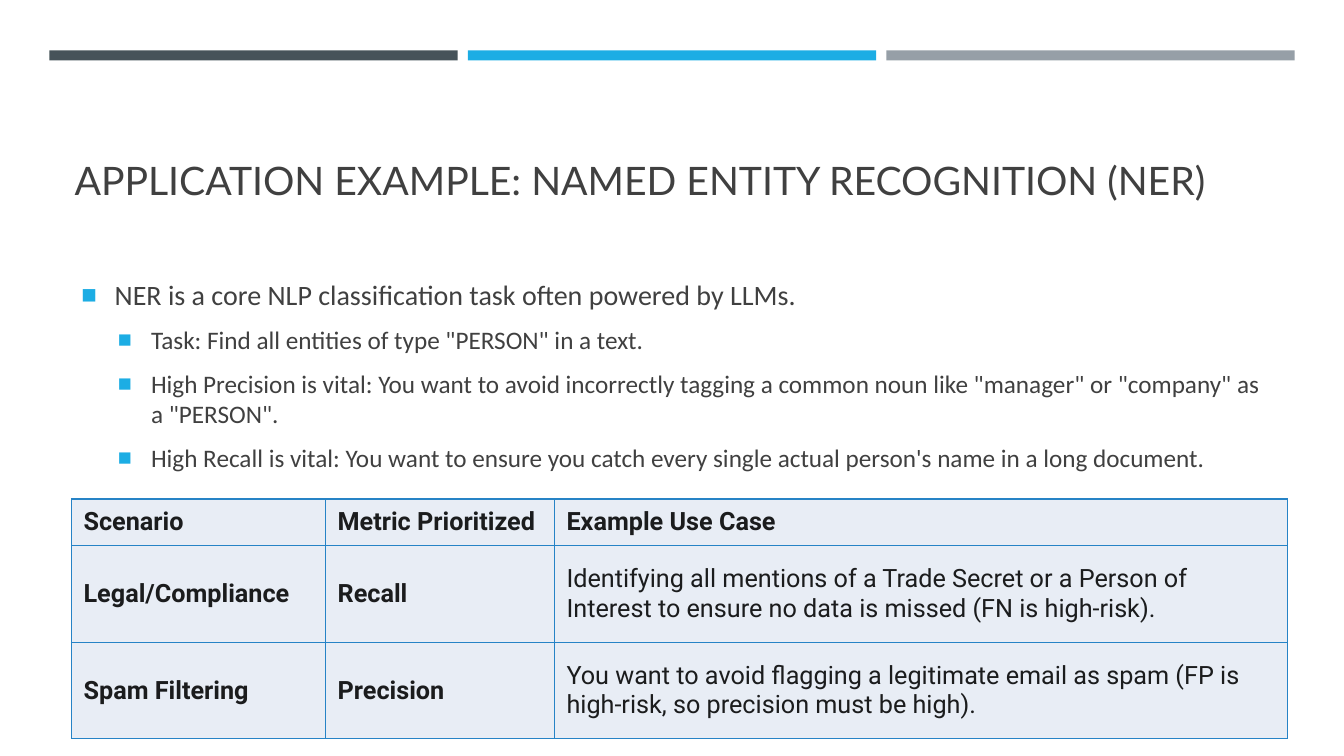
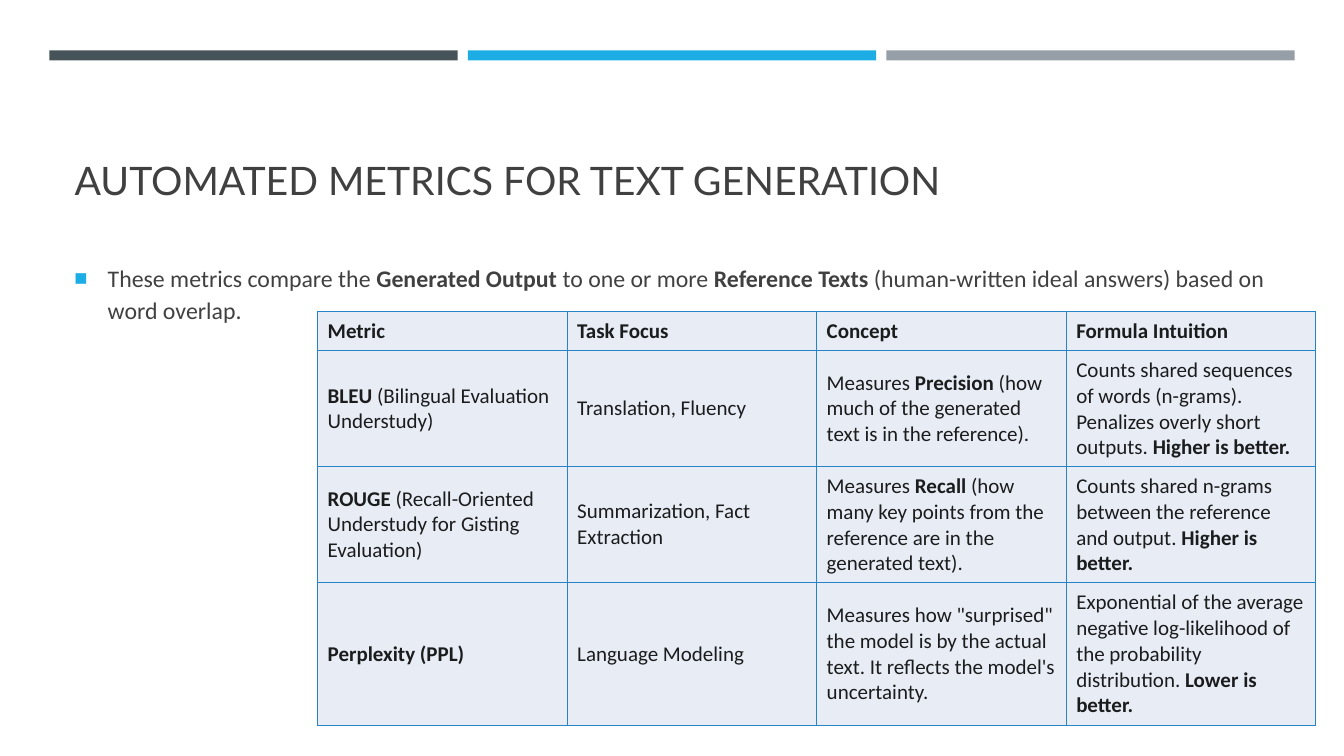
import pptx
import pptx.util
import pptx.dml.color
import pptx.enum.shapes
import pptx.enum.text
import pptx.oxml.ns
import lxml.etree

Inches = pptx.util.Inches
Pt = pptx.util.Pt
ANCHOR = pptx.enum.text.MSO_ANCHOR

COLORS = {
    "dark": "465359",
    "accent": "1CADE4",
    "gray": "969FA7",
    "text": "404040",
    "cell_text": "1B1C1D",
    "cell": "E8EDF5",
    "border": "2683C6",
}
BANDS = ["dark", "accent", "gray"]
BAND = {"left": 0.49, "top": 0.5, "width": 4.05, "height": 0.1, "step": 4.15}
TITLE_BOX = (0.64, 0.77, 12.06, 1.3)
TITLE_FONT = {"name": "Lato", "size": 28, "color": "text", "bold": False}
BODY_FONT = {"name": "Calibri", "color": "text"}
LEVELS = [
    {"margin": 0.33, "line_spacing": 1.1},
    {"margin": 0.69, "line_spacing": 1.0},
]
HANGING = 0.33

# Text between asterisks is bold.
SLIDES = [
    {
        "title": "APPLICATION EXAMPLE: NAMED ENTITY RECOGNITION (NER)",
        "body_box": (0.71, 2.67, 12.06, 2.18),
        "body": [
            (0, 20, "NER is a core NLP classification task often powered by LLMs."),
            (1, 18, 'Task: Find all entities of type "PERSON" in a text.'),
            (1, 18, 'High Precision is vital: You want to avoid incorrectly tagging a common noun '
                    'like "manager" or "company" as a "PERSON".'),
            (1, 18, "High Recall is vital: You want to ensure you catch every single actual "
                    "person's name in a long document."),
        ],
        "table": {
            "at": (0.71, 4.95),
            "columns": [2.52, 2.27, 7.27],
            "rows": [0.46, 0.96, 0.96],
            "insets": (0.12, 0.08),
            "font": {"name": "Roboto", "size": 18, "color": "cell_text"},
            "cells": [
                ["*Scenario*", "*Metric Prioritized*", "*Example Use Case*"],
                ["*Legal/Compliance*", "*Recall*",
                 "Identifying all mentions of a Trade Secret or a Person of Interest "
                 "to ensure no data is missed (FN is high-risk)."],
                ["*Spam Filtering*", "*Precision*",
                 "You want to avoid flagging a legitimate email as spam "
                 "(FP is high-risk, so precision must be high)."],
            ],
        },
    },
    {
        "title": "AUTOMATED METRICS FOR TEXT GENERATION",
        "body_box": (0.64, 2.54, 12.06, 0.75),
        "body": [
            (0, 17, "These metrics compare the *Generated Output* to one or more *Reference Texts* "
                    "(human-written ideal answers) based on word overlap."),
        ],
        "table": {
            "at": (3.15, 3.09),
            "columns": [9.9 / 4] * 4,
            "rows": [0.39, 1.15, 1.15, 1.42],
            "insets": (0.1, 0.07),
            "font": {"name": "Calibri", "size": 15, "color": "cell_text"},
            "cells": [
                ["*Metric*", "*Task Focus*", "*Concept*", "*Formula Intuition*"],
                ["*BLEU* (Bilingual Evaluation Understudy)",
                 "Translation, Fluency",
                 "Measures *Precision* (how much of the generated text is in the reference).",
                 "Counts shared sequences of words (n-grams). Penalizes overly short outputs. "
                 "*Higher is better.*"],
                ["*ROUGE* (Recall-Oriented Understudy for Gisting Evaluation)",
                 "Summarization, Fact Extraction",
                 "Measures *Recall* (how many key points from the reference are in the generated text).",
                 "Counts shared n-grams between the reference and output. *Higher is better.*"],
                ["*Perplexity (PPL)*",
                 "Language Modeling",
                 'Measures how "surprised" the model is by the actual text. '
                 "It reflects the model's uncertainty.",
                 "Exponential of the average negative log-likelihood of the probability distribution. "
                 "*Lower is better.*"],
            ],
        },
    },
]


def rgb(color):
    return pptx.dml.color.RGBColor.from_string(COLORS[color])


def add_element(parent, tag, **attributes):
    element = lxml.etree.SubElement(parent, pptx.oxml.ns.qn(tag))
    for name, value in attributes.items():
        element.set(name, str(value))
    return element


def format_font(font, values):
    for name, value in values.items():
        if name == "color":
            font.color.rgb = rgb(value)
        else:
            setattr(font, name, Pt(value) if name == "size" else value)


def add_runs(paragraph, text, values):
    for index, part in enumerate(text.split("*")):
        if part:
            run = paragraph.add_run()
            run.text = part
            format_font(run.font, {**values, "bold": index % 2 == 1})


def add_bands(slide):
    for index, color in enumerate(BANDS):
        band = slide.shapes.add_shape(
            pptx.enum.shapes.MSO_SHAPE.RECTANGLE,
            Inches(BAND["left"] + index * BAND["step"]), Inches(BAND["top"]),
            Inches(BAND["width"]), Inches(BAND["height"]))
        band.shadow.inherit = False
        band.fill.solid()
        band.fill.fore_color.rgb = rgb(color)
        band.line.fill.background()


def set_title(slide, text):
    title = slide.shapes.title
    for name, value in zip(("left", "top", "width", "height"), TITLE_BOX):
        setattr(title, name, Inches(value))
    frame = title.text_frame
    frame.word_wrap = True
    frame.vertical_anchor = ANCHOR.BOTTOM
    frame.text = text
    paragraph = frame.paragraphs[0]
    paragraph.alignment = pptx.enum.text.PP_ALIGN.LEFT
    format_font(paragraph.runs[0].font, TITLE_FONT)


def set_bullet(paragraph, margin):
    properties = paragraph._p.get_or_add_pPr()
    properties.set("marL", str(Inches(margin)))
    properties.set("indent", str(-Inches(HANGING)))
    bullet_color = add_element(properties, "a:buClr")
    add_element(bullet_color, "a:srgbClr", val=COLORS["accent"])
    add_element(properties, "a:buSzPct", val=92000)
    add_element(properties, "a:buFont", typeface="Arial")
    add_element(properties, "a:buChar", char="■")


def add_body(slide, box, items):
    frame = slide.shapes.add_textbox(*map(Inches, box)).text_frame
    frame.word_wrap = True
    for index, (level, size, text) in enumerate(items):
        paragraph = frame.add_paragraph() if index else frame.paragraphs[0]
        set_bullet(paragraph, LEVELS[level]["margin"])
        paragraph.level = level
        paragraph.line_spacing = LEVELS[level]["line_spacing"]
        paragraph.space_after = Pt(6)
        if index:
            paragraph.space_before = Pt(0.2 * size)
        add_runs(paragraph, text, {**BODY_FONT, "size": size})


def set_borders(cell):
    properties = cell._tc.get_or_add_tcPr()
    for side in ("a:lnL", "a:lnR", "a:lnT", "a:lnB"):
        line = add_element(properties, side, w=Pt(1))
        fill = add_element(line, "a:solidFill")
        add_element(fill, "a:srgbClr", val=COLORS["border"])


def add_table(slide, data):
    columns, rows = data["columns"], data["rows"]
    table = slide.shapes.add_table(
        len(rows), len(columns), *map(Inches, data["at"]),
        Inches(sum(columns)), Inches(sum(rows))).table
    table.first_row = table.horz_banding = False
    for column, width in zip(table.columns, columns):
        column.width = Inches(width)
    for row, height in zip(table.rows, rows):
        row.height = Inches(height)
    side, edge = map(Inches, data["insets"])
    layout = {"margin_left": side, "margin_right": side, "margin_top": edge,
              "margin_bottom": edge, "vertical_anchor": ANCHOR.MIDDLE}
    for row, texts in zip(table.rows, data["cells"]):
        for cell, text in zip(row.cells, texts):
            for name, value in layout.items():
                setattr(cell, name, value)
            set_borders(cell)
            cell.fill.solid()
            cell.fill.fore_color.rgb = rgb("cell")
            add_runs(cell.text_frame.paragraphs[0], text, data["font"])


def main():
    presentation = pptx.Presentation()
    presentation.slide_width = Inches(13.33)
    presentation.slide_height = Inches(7.5)
    for content in SLIDES:
        slide = presentation.slides.add_slide(presentation.slide_layouts[5])
        add_bands(slide)
        set_title(slide, content["title"])
        add_body(slide, content["body_box"], content["body"])
        add_table(slide, content["table"])
    presentation.save("out.pptx")


if __name__ == "__main__":
    main()
